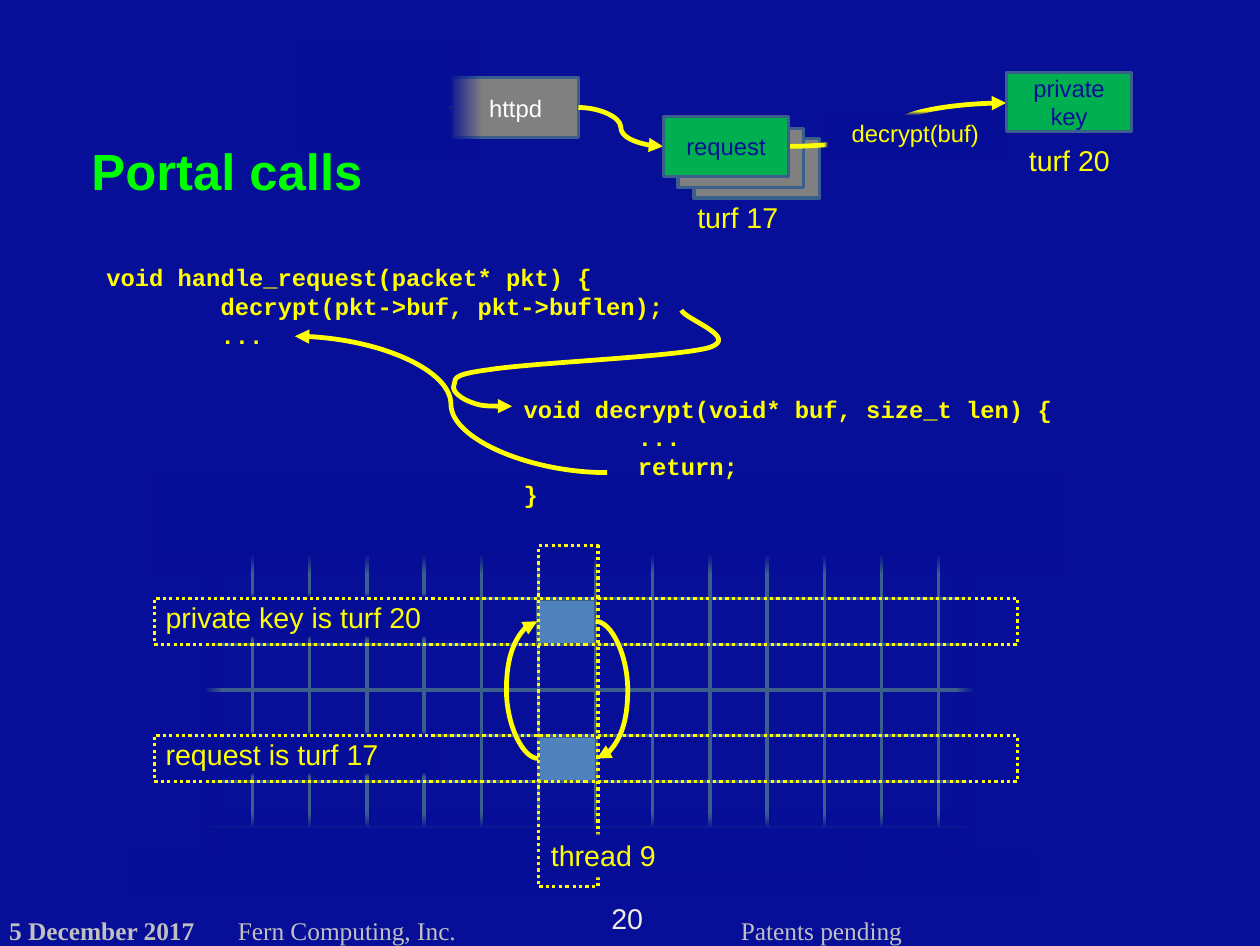
from lxml import etree
from pptx import Presentation
from pptx import util as u
from pptx.dml.color import RGBColor
from pptx.enum import dml, shapes, text
from pptx.oxml import parse_xml
from pptx.oxml.ns import nsdecls, qn

COLUMN, ROW = u.Inches(0.5), u.Inches(0.4)
NAVY, YELLOW, GREEN, LIME = "070E97", "FFFF00", "00B050", "00FF00"
GREY, SILVER, STEEL, EDGE = "808080", "C0C0C0", "4F81BD", "3A5F8C"
WHITE, CREAM = "FFFFFF", "EEECE1"
GRID_LEFT, GRID_TOP, GRID_COLUMNS, GRID_ROWS = 3.42, 12.08, 14, 6
BOX_SIZE = (2.2, 1.3)
CELL_SIZE = (1.02, 0.98)


def color(hex_code):
    return RGBColor.from_string(hex_code)


def grid(*lengths):
    """Turn alternating columns and rows into slide units."""
    return [int(n * (ROW if i % 2 else COLUMN)) for i, n in enumerate(lengths)]


def write(frame, lines, size, tint, font="Arial", bold=False, align=None,
          anchor=text.MSO_ANCHOR.TOP, insets=(0, 0), wrap=True, tab=None):
    frame.word_wrap = wrap
    frame.vertical_anchor = anchor
    frame.margin_left = frame.margin_right = u.Inches(insets[0])
    frame.margin_top = frame.margin_bottom = u.Inches(insets[1])
    for i, line in enumerate(lines):
        para = frame.add_paragraph() if i else frame.paragraphs[0]
        para.add_run().text = line
        para.alignment = align or text.PP_ALIGN.LEFT
        if tab:
            stops = etree.SubElement(para._p.get_or_add_pPr(), qn("a:tabLst"))
            etree.SubElement(stops, qn("a:tab"), pos=str(u.Inches(tab)), algn="l")
        para.font.name, para.font.size, para.font.bold = font, u.Pt(size), bold
        para.font.color.rgb = color(tint)


def add_text(page, place, lines, size, tint, **style):
    box = page.shapes.add_textbox(*grid(*place))
    write(box.text_frame, lines, size, tint, **style)


def add_code(page, place, lines):
    add_text(page, place, lines, 15, YELLOW, font="Courier New", bold=True,
             insets=(0.12, 0), tab=1)


def add_rect(page, place, fill=None, line=EDGE, dotted=False):
    rect = page.shapes.add_shape(shapes.MSO_SHAPE.RECTANGLE, *grid(*place))
    rect.shadow.inherit = False
    if fill:
        rect.fill.solid()
        rect.fill.fore_color.rgb = color(fill)
    else:
        rect.fill.background()
    rect.line.color.rgb = color(line)
    rect.line.width = u.Pt(2)
    if dotted:
        rect.line.dash_style = dml.MSO_LINE.ROUND_DOT
    return rect


def add_box(page, left, top, fill, label=None, tint=NAVY):
    box = add_rect(page, (left, top, *BOX_SIZE), fill)
    if label:
        write(box.text_frame, [label], 15, tint, align=text.PP_ALIGN.CENTER,
              anchor=text.MSO_ANCHOR.MIDDLE, insets=(0.11, 0.06))


def add_fade(page, place, angle=0, rotation=0, from_center=False):
    """Background-coloured patch that turns transparent at its end or edges."""
    patch = page.shapes.add_shape(shapes.MSO_SHAPE.RECTANGLE, *grid(*place))
    patch.rotation = rotation
    if from_center:
        shade = ('<a:path path="rect"><a:fillToRect l="50000" t="50000" '
                 'r="50000" b="50000"/></a:path>')
    else:
        shade = f'<a:lin ang="{angle * 60000}" scaled="0"/>'
    stops = "".join(
        f'<a:gs pos="{share * 1000}"><a:srgbClr val="{NAVY}">'
        f'<a:alpha val="{alpha * 1000}"/></a:srgbClr></a:gs>'
        for share, alpha in ((0, 100), (81, 100), (100, 0)))
    gradient = parse_xml(f'<a:gradFill {nsdecls("a")} rotWithShape="1">'
                         f'<a:gsLst>{stops}</a:gsLst>{shade}</a:gradFill>')
    patch._element.spPr.find(qn("a:prstGeom")).addnext(gradient)
    patch.line.fill.background()
    patch.shadow.inherit = False
    return patch


def add_label(page, place, label, size=18, **style):
    patch = add_fade(page, place, from_center=True)
    write(patch.text_frame, [label], size, YELLOW, **{"insets": (0.1, 0.05), **style})


def style_arrow(arrow):
    arrow.line.color.rgb = color(YELLOW)
    arrow.line.width = u.Pt(3)
    outline = arrow._element.spPr.find(qn("a:ln"))
    etree.SubElement(outline, qn("a:tailEnd"), type="triangle")


def add_arrow(page, start, end, bend=None):
    arrow = page.shapes.add_connector(shapes.MSO_CONNECTOR.CURVE, *grid(*start, *end))
    style_arrow(arrow)
    properties = arrow._element.spPr
    etree.SubElement(properties, qn("a:effectLst"))
    if bend:
        guides = properties.find(qn("a:prstGeom")).find(qn("a:avLst"))
        etree.SubElement(guides, qn("a:gd"), name="adj1", fmla=f"val {int(bend * 100000)}")


def add_curve(page, start, controls):
    """Arrow along cubic curves, three control points to each."""
    builder = page.shapes.build_freeform(*grid(*start))
    builder.add_line_segments([grid(*point) for point in controls], close=False)
    arrow = builder.convert_to_shape()
    arrow.fill.background()
    arrow.shadow.inherit = False
    style_arrow(arrow)
    for outline in arrow._element.iter(qn("a:path")):
        segments = outline.findall(qn("a:lnTo"))
        for i in range(0, len(segments), 3):
            curve = etree.SubElement(outline, qn("a:cubicBezTo"))
            for segment in segments[i:i + 3]:
                curve.append(segment[0])
                outline.remove(segment)


def add_footer(page):
    for left, width, line, bold in ((0.16, 3.6, "5 December 2017", True),
                                    (4.16, 4.2, "Fern Computing, Inc.", False),
                                    (12.96, 3.2, "Patents pending", False)):
        add_text(page, (left, 20, width, 0.65), [line], 16, SILVER,
                 font="Times New Roman", bold=bold, wrap=False)
    add_text(page, (10.66, 19.68, 0.62, 0.73), ["20"], 18, CREAM,
             align=text.PP_ALIGN.CENTER, wrap=False)


def add_memory_grid(page):
    for row in range(GRID_ROWS):
        add_rect(page, (GRID_LEFT, GRID_TOP + row, GRID_COLUMNS, 1))
    for column in range(GRID_COLUMNS):
        add_rect(page, (GRID_LEFT + column, GRID_TOP, 1, GRID_ROWS))
    # Faded edges: bottom, left, right, top
    add_fade(page, (9.46, 8.8, 1.46, 19.8), rotation=270)
    add_fade(page, (2.2, 11.68, 1.68, 6.95))
    add_fade(page, (16.74, 11.68, 1.68, 6.95), angle=180)
    add_fade(page, (9.76, 1.53, 1.74, 19.8), rotation=90)


def add_turf(page, row, label, width):
    add_label(page, (2.7, row - 0.1, width, 1), label)
    add_rect(page, (2.7, row, 15.1, 1), line=YELLOW, dotted=True)


def main():
    deck = Presentation()
    deck.slide_width, deck.slide_height = u.Inches(11.02), u.Inches(8.27)
    page = deck.slides.add_slide(deck.slide_layouts[6])
    page.background.fill.solid()
    page.background.fill.fore_color.rgb = color(NAVY)
    add_footer(page)

    # Memory grid and code
    add_memory_grid(page)
    add_rect(page, (9.42, 16.1, *CELL_SIZE), STEEL)
    add_code(page, (1.62, 5.75, 10.44, 2.4),
             ["void handle_request(packet* pkt) {",
              "\tdecrypt(pkt->buf, pkt->buflen);", "\t..."])
    add_turf(page, 16.08, "request is turf 17", 4.9)
    add_code(page, (8.92, 8.62, 11.46, 2.53),
             ["void decrypt(void* buf, size_t len) {", "\t...", "\treturn;", "}"])

    # Call and return
    add_curve(page, (11.92, 6.78),
              [(11.98, 6.98), (12.96, 7.38), (12.4, 7.6),
               (11.82, 7.8), (9.3, 7.93), (8.56, 8.08),
               (7.82, 8.2), (8, 8.3), (7.94, 8.43),
               (7.9, 8.55), (8.08, 8.73), (8.26, 8.8),
               (8.42, 8.88), (8.68, 8.88), (8.96, 8.88)])
    add_arrow(page, (10.62, 10.33), (5.16, 7.35))

    # Thread crossing both turfs
    add_rect(page, (9.4, 13.1, *CELL_SIZE), STEEL)
    add_arrow(page, (9.42, 16.58), (9.4, 13.58), bend=28.5)
    add_arrow(page, (10.42, 13.58), (10.44, 16.58), bend=28.5)
    add_rect(page, (9.42, 11.93, 1.04, 7.45), line=YELLOW, dotted=True)
    add_label(page, (9.44, 18.2, 5.6, 1), "thread 9")
    add_turf(page, 13.08, "private key is turf 20", 5.6)

    # Process chain
    add_box(page, 12.14, 3.03, GREY)
    add_box(page, 11.86, 2.8, GREY)
    add_box(page, 7.92, 1.7, GREY, "httpd", WHITE)
    add_arrow(page, (6.34, 2.88), (7.92, 2.35))
    add_arrow(page, (10.12, 2.35), (11.6, 3.2))
    add_arrow(page, (13.8, 3.2), (17.6, 2.25))
    add_label(page, (14.42, 2.45, 3.18, 0.93), "decrypt(buf)", 15,
              align=text.PP_ALIGN.CENTER, insets=(0.11, 0.06))
    add_fade(page, (5.24, 0.9, 3.18, 2.48))
    add_text(page, (1.6, 2, 18.82, 3.45), ["Portal calls"], 32, LIME, bold=True,
             anchor=text.MSO_ANCHOR.MIDDLE)
    add_box(page, 11.6, 2.55, GREEN, "request")
    add_box(page, 17.6, 1.58, GREEN, "private key")
    for left, top, label in ((12, 4.25, "turf 17"), (17.8, 3, "turf 20")):
        add_text(page, (left, top, 1.84, 1), [label], 18, YELLOW,
                 insets=(0.1, 0.05), wrap=False)

    deck.save("out.pptx")


if __name__ == "__main__":
    main()
